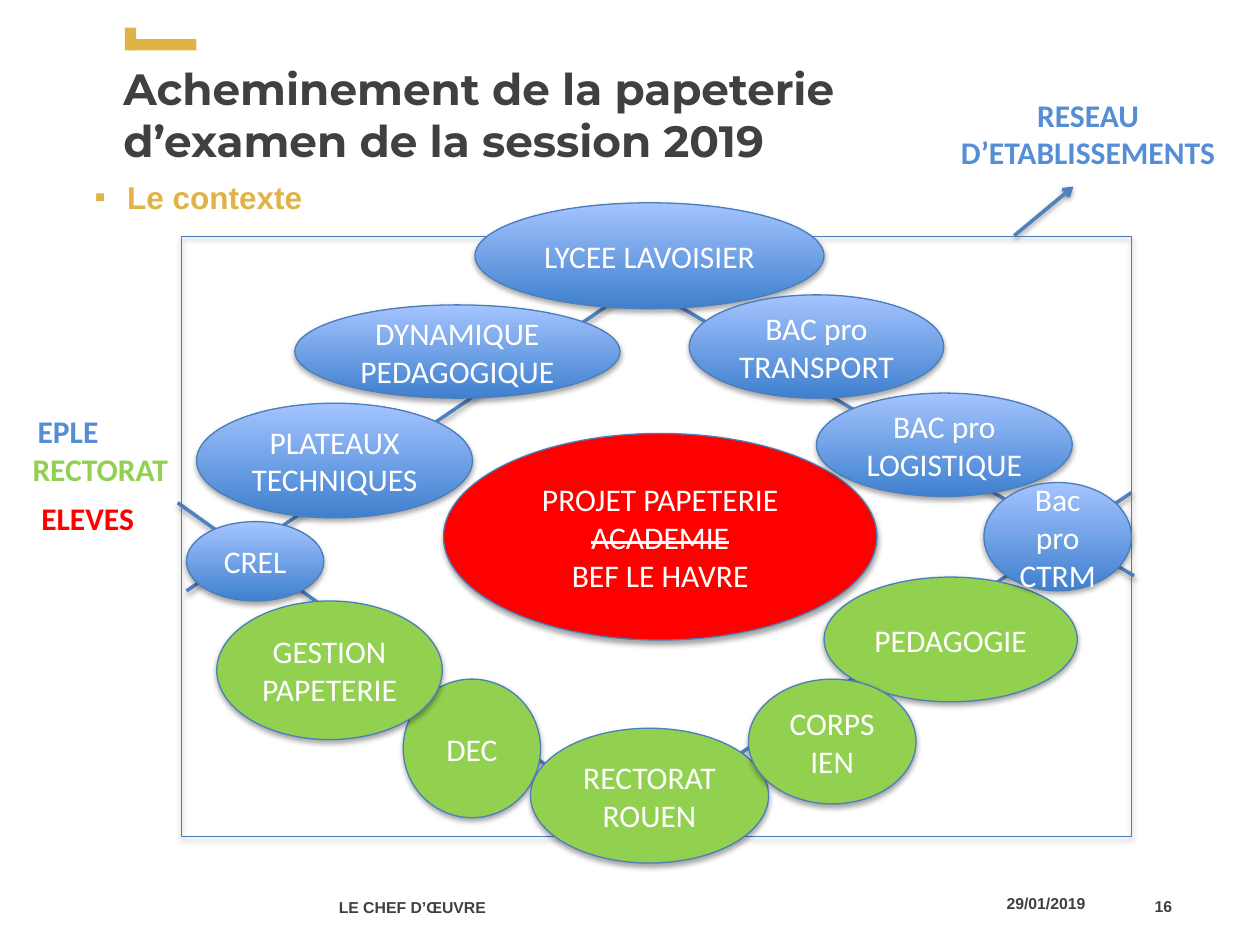
from lxml import etree
from pptx import Presentation
from pptx import util as u
from pptx.dml.color import RGBColor
from pptx.enum import shapes, text
from pptx.oxml.ns import qn

SCALE = 9144  # EMU per px, 100 px to the inch
BLUE, GREEN, RED = "558ED5", "92D050", "FF0000"
GOLD, GREY, WHITE = "E0B347", "404040", "FFFFFF"
OUTLINE, LINK = "4B7EBC", "4F81BD"
BLUE_GRADIENT = ("3F80CE", "A4C4FF")
BUBBLE_INSET = 8


def px(*lengths):
    return [u.Emu(length * SCALE) for length in lengths]


def color(hex_string):
    return RGBColor.from_string(hex_string)


class Page:
    """Style and drawing methods for the current slide."""

    def __init__(self, slide, font="Calibri", size=18):
        self.slide, self.font, self.size = slide, font, size

    def style(self, paragraph, ink, bold=True, size=None, font=None, align=None):
        paragraph.font.name = font or self.font
        paragraph.font.size = u.Pt(size or self.size)
        paragraph.font.bold = bold
        paragraph.font.color.rgb = color(ink)
        if align is not None:
            paragraph.alignment = align

    def shadow(self, item, opacity):
        effects = etree.SubElement(item._element.spPr, qn("a:effectLst"))
        outer = etree.SubElement(effects, qn("a:outerShdw"), blurRad="40000",
                                 dist="22000", dir="5400000", rotWithShape="0")
        black = etree.SubElement(outer, qn("a:srgbClr"), val="000000")
        etree.SubElement(black, qn("a:alpha"), val=str(opacity * 1000))

    def place(self, holder, *box):
        holder.left, holder.top, holder.width, holder.height = px(*box)
        return holder.text_frame

    def title(self, lines, *box):
        frame = self.place(self.slide.shapes.title, *box)
        frame.vertical_anchor = text.MSO_ANCHOR.MIDDLE
        heading = frame.paragraphs[0]
        heading.add_run().text = lines[0]
        for line in lines[1:]:
            heading.add_line_break()
            heading.add_run().text = line
        self.style(heading, GREY, size=25, font="Montserrat", align=text.PP_ALIGN.LEFT)

    def bullet(self, words, *box):
        topic = self.place(self.slide.placeholders[1], *box).paragraphs[0]
        topic.text = words
        topic.space_before = u.Pt(0)
        props = topic._p.get_or_add_pPr()
        indent = 26 * SCALE
        props.set("marL", str(indent))
        props.set("indent", str(-indent))
        tint = etree.SubElement(props, qn("a:buClr"))
        etree.SubElement(tint, qn("a:srgbClr"), val=GOLD)
        etree.SubElement(props, qn("a:buFont"), typeface="Arial")
        etree.SubElement(props, qn("a:buChar"), char="▪")
        self.style(topic, GOLD, font="Arial")

    def label(self, words, box, ink, wrap=False, anchor=text.MSO_ANCHOR.TOP, **style):
        frame = self.slide.shapes.add_textbox(*px(*box)).text_frame
        frame.word_wrap = wrap
        frame.vertical_anchor = anchor
        frame.text = words
        self.style(frame.paragraphs[0], ink, **style)

    def footer(self, words, box, align=text.PP_ALIGN.LEFT):
        self.label(words, box, GREY, wrap=True, anchor=text.MSO_ANCHOR.MIDDLE,
                   size=9, font="Arial", align=align)

    def link(self, x1, y1, x2, y2, arrow=False):
        line = self.slide.shapes.add_connector(
            shapes.MSO_CONNECTOR.STRAIGHT, *px(x1, y1, x2, y2))
        line.line.color.rgb = color(LINK)
        line.line.width = u.Pt(2)
        if arrow:
            etree.SubElement(line.line._get_or_add_ln(), qn("a:tailEnd"), type="arrow")
        self.shadow(line, 38)

    def bar(self, *box):
        bar = self.slide.shapes.add_shape(shapes.MSO_SHAPE.RECTANGLE, *px(*box))
        bar.shadow.inherit = False
        bar.fill.solid()
        bar.fill.fore_color.rgb = color(GOLD)
        bar.line.fill.background()

    def outlined(self, kind, box):
        item = self.slide.shapes.add_shape(kind, *px(*box))
        item.fill.background()
        item.line.color.rgb = color(OUTLINE)
        item.line.width = u.Pt(0.75)
        self.shadow(item, 35)
        return item

    def bubble(self, words, box, fill):
        oval = self.outlined(shapes.MSO_SHAPE.OVAL, box)
        if fill == BLUE:
            oval.fill.gradient()
            oval.fill.gradient_angle = 90
            for stop, shade in zip(oval.fill.gradient_stops, BLUE_GRADIENT):
                stop.color.rgb = color(shade)
        else:
            oval.fill.solid()
            oval.fill.fore_color.rgb = color(fill)
        frame = oval.text_frame
        frame.vertical_anchor = text.MSO_ANCHOR.MIDDLE
        frame.margin_left, frame.margin_right = px(BUBBLE_INSET, BUBBLE_INSET)
        frame.text = words
        for paragraph in frame.paragraphs:
            self.style(paragraph, WHITE, bold=False, align=text.PP_ALIGN.CENTER)
        return frame


def main():
    deck = Presentation()
    deck.slide_width, deck.slide_height = px(1000, 750)
    page = Page(deck.slides.add_slide(deck.slide_layouts[1]))

    # Heading and footer
    page.title(["Acheminement de la papeterie ", "d’examen de la session 2019"],
               88, 20, 862, 141)
    page.bullet("Le contexte", 65, 136, 909, 528)
    page.footer("LE CHEF D’ŒUVRE", (259, 700, 388, 40))
    page.footer("29/01/2019", (789, 697, 127, 40))
    page.footer("16", (891, 699, 49, 40), text.PP_ALIGN.RIGHT)

    # Links behind the ring of partners
    for ends in [(148, 469, 517, 219), (517, 230, 900, 457),
                 (141, 399, 492, 649), (535, 633, 898, 391)]:
        page.link(*ends)

    # Project at the centre
    project = page.bubble("PROJET PAPETERIE\nACADEMIE\nBEF LE HAVRE",
                          (352, 344, 344, 164), RED)
    struck = project.paragraphs[1].runs[0]
    struck.font._element.set("strike", "sngStrike")

    page.bubble("DEC", (320, 539, 109, 110), GREEN)
    page.bubble("PEDAGOGIE", (654, 458, 201, 99), GREEN)

    # Colour key
    page.label("EPLE", (20, 322, 69, 40), BLUE)
    page.label("RECTORAT", (16, 352, 128, 40), GREEN)
    page.label("ELEVES", (23, 391, 94, 40), RED)

    # School network and its frame
    page.link(805, 187, 852, 148, arrow=True)
    page.label("RESEAU D’ETABLISSEMENTS", (751, 71, 225, 71), BLUE,
               wrap=True, align=text.PP_ALIGN.CENTER)
    page.outlined(shapes.MSO_SHAPE.RECTANGLE, (144, 188, 754, 476))

    # Partners in front of the frame
    partners = [
        ("BAC pro LOGISTIQUE", (648, 312, 203, 82), BLUE),
        ("PLATEAUX TECHNIQUES", (156, 320, 219, 91), BLUE),
        ("DYNAMIQUE PEDAGOGIQUE", (234, 242, 258, 74), BLUE),
        ("CREL", (148, 414, 109, 63), BLUE),
        ("LYCEE LAVOISIER", (377, 161, 277, 84), BLUE),
        ("BAC pro TRANSPORT", (547, 234, 202, 82), BLUE),
        ("Bac pro CTRM", (781, 383, 117, 86), BLUE),
        ("GESTION PAPETERIE", (172, 477, 179, 110), GREEN),
        ("RECTORAT ROUEN", (421, 578, 189, 107), GREEN),
        ("CORPS IEN", (594, 539, 133, 99), GREEN),
    ]
    for partner in partners:
        page.bubble(*partner)

    # Corner mark above the title
    page.bar(99, 22, 9, 18)
    page.bar(103, 31, 53, 9)

    deck.save("out.pptx")


if __name__ == "__main__":
    main()
